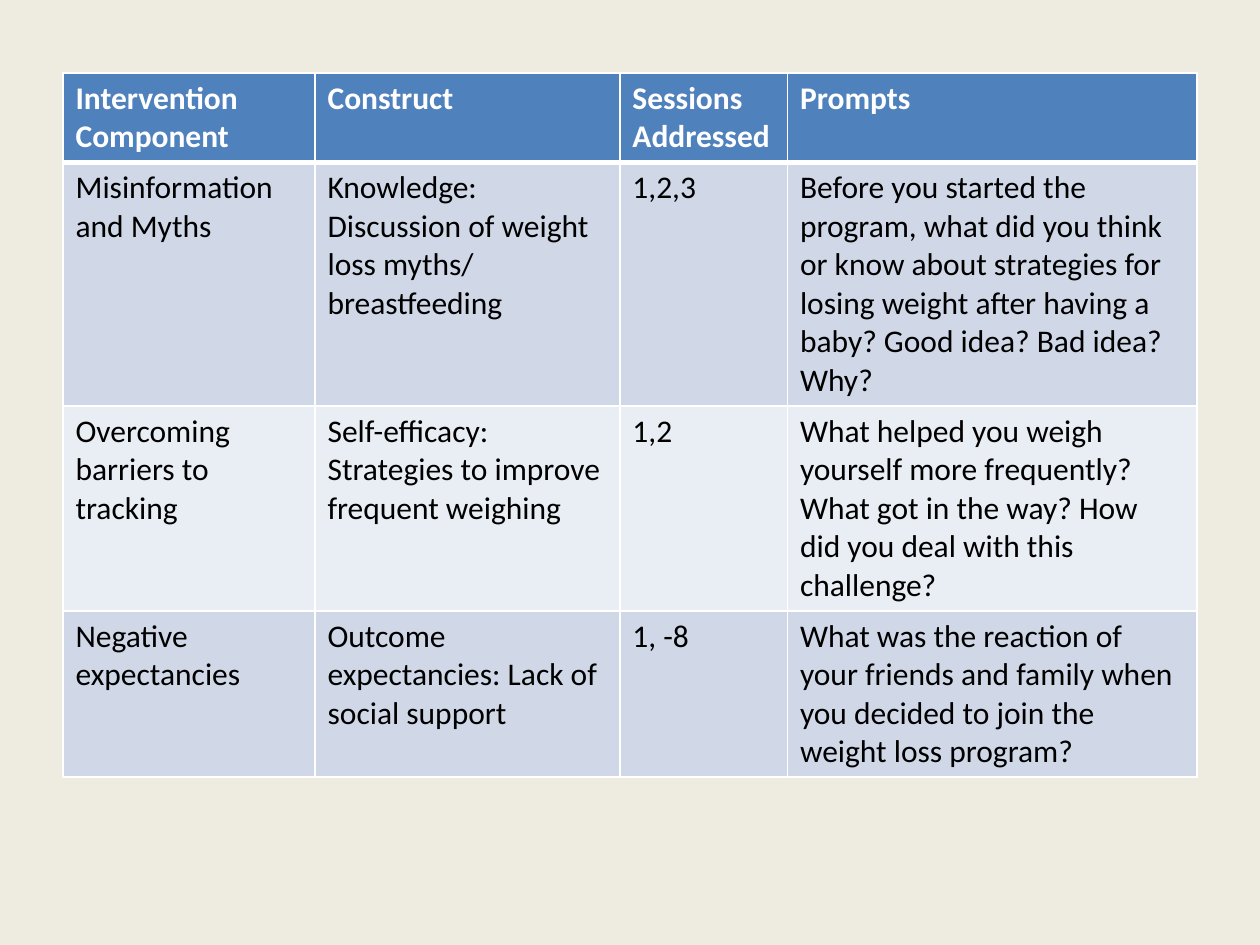
from lxml.etree import SubElement
from pptx import Presentation
from pptx.dml.color import RGBColor
from pptx.oxml.ns import qn
from pptx.util import Inches, Pt

WIDTHS = [2, 2.42, 1.33, 3.25]
ROW = 0.41
HEAD = {"size": Pt(18), "name": "Calibri", "bold": True}
BODY = {**HEAD, "bold": False}
ROWS = [
    ["Intervention Component", "Construct", "Sessions Addressed", "Prompts"],
    ["Misinformation and Myths",
     "Knowledge: Discussion of weight loss myths/ breastfeeding",
     "1,2,3",
     "Before you started the program, what did you think or know about "
     "strategies for losing weight after having a baby? Good idea? Bad idea? Why?"],
    ["Overcoming barriers to tracking",
     "Self-efficacy: Strategies to improve frequent weighing",
     "1,2",
     "What helped you weigh yourself more frequently? What got in the way? "
     "How did you deal with this challenge?"],
    ["Negative expectancies",
     "Outcome expectancies: Lack of social support",
     "1, -8",
     "What was the reaction of your friends and family when you decided "
     "to join the weight loss program?"],
]


def paint(fmt, color):
    """Give a fill format one solid colour."""
    fmt.solid()
    fmt.fore_color.rgb = RGBColor.from_string(color)


def edge(cell, side, width, color="FFFFFF"):
    """Draw one border of a cell."""
    props = cell._tc.get_or_add_tcPr()
    line = SubElement(props, qn(f"a:ln{side}"), w=str(Pt(width)))
    fill = SubElement(line, qn("a:solidFill"))
    SubElement(fill, qn("a:srgbClr"), val=color)


def style(cell, text, row):
    """Write a cell and format it for its row."""
    head = row == 0
    cell.text = text
    font = cell.text_frame.paragraphs[0].runs[0].font
    for key, value in (HEAD if head else BODY).items():
        setattr(font, key, value)
    paint(font.fill, "FFFFFF" if head else "000000")
    for side in "LRTB":
        thick = (head and side == "B") or (row == 1 and side == "T")
        edge(cell, side, 3 if thick else 1)
    paint(cell.fill, "4F81BD" if head else "D0D8E8" if row % 2 else "E9EDF4")


def grid(slide, left, top, width, height):
    """Place the table of intervention components in its box."""
    frame = slide.shapes.add_table(
        len(ROWS), len(WIDTHS),
        Inches(left), Inches(top), Inches(width), Inches(height))
    table = frame.table
    for column, share in zip(table.columns, WIDTHS):
        column.width = Inches(width * share / sum(WIDTHS))
    for row, texts in enumerate(ROWS):
        table.rows[row].height = Inches(ROW)
        for column, text in enumerate(texts):
            style(table.cell(row, column), text, row)
    frame.height = Inches(height)


def main():
    """Build the slide and save it."""
    deck = Presentation()
    deck.slide_width, deck.slide_height = Inches(10), Inches(7.5)
    slide = deck.slides.add_slide(deck.slide_layouts[6])
    paint(slide.background.fill, "EEECE1")
    grid(slide, 0.5, 0.58, 9, 5.5)
    deck.save("out.pptx")


if __name__ == "__main__":
    main()
